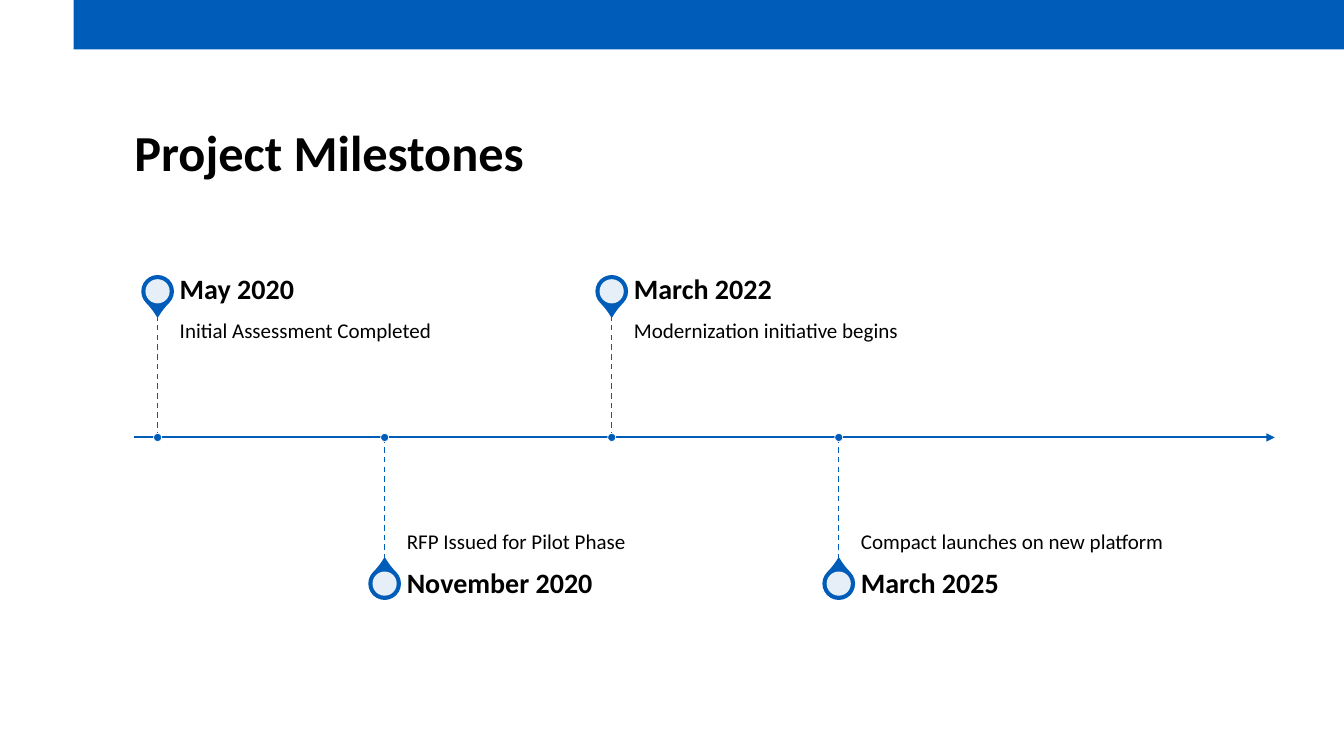
from lxml.etree import SubElement
from pptx import Presentation
from pptx.dml.color import RGBColor
from pptx.enum.dml import MSO_LINE
from pptx.enum.shapes import MSO_CONNECTOR, MSO_SHAPE
from pptx.enum.text import MSO_ANCHOR
from pptx.oxml.ns import qn
from pptx.util import Inches, Pt

COLORS = {"blue": "005CB9", "white": "FFFFFF", "text": "000000"}
FONT = "Calibri"
SLIDE_W, SLIDE_H = 13.33, 7.5

MILESTONES = [
    ("May 2020", "Initial Assessment Completed"),
    ("November 2020", "RFP Issued for Pilot Phase"),
    ("March 2022", "Modernization initiative begins"),
    ("March 2025", "Compact launches on new platform"),
]


def rgb(name):
    return RGBColor.from_string(COLORS[name])


def add_text(slide, text, x, y, w, h, size, bold=False,
             anchor=MSO_ANCHOR.TOP, insets=(0, 0, 0, 0)):
    """Insets run left, top, right, bottom."""
    tf = slide.shapes.add_textbox(*map(Inches, (x, y, w, h))).text_frame
    tf.word_wrap = True
    tf.vertical_anchor = anchor
    (tf.margin_left, tf.margin_top,
     tf.margin_right, tf.margin_bottom) = map(Inches, insets)
    p = tf.paragraphs[0]
    p.line_spacing = 0.9
    r = p.add_run()
    r.text = text
    r.font.name, r.font.size, r.font.bold = FONT, Pt(size), bold
    r.font.color.rgb = rgb("text")


def add_centered(slide, kind, cx, cy, w, h, fill, line=None, line_width=1):
    sp = slide.shapes.add_shape(
        kind, *map(Inches, (cx - w / 2, cy - h / 2, w, h)))
    sp.shadow.inherit = False
    sp.fill.solid()
    sp.fill.fore_color.rgb = rgb(fill)
    if line:
        sp.line.color.rgb = rgb(line)
        sp.line.width = Pt(line_width)
    else:
        sp.line.fill.background()
    return sp


def add_line(slide, x1, y1, x2, y2, width, dashed=False, arrow=False):
    line = slide.shapes.add_connector(
        MSO_CONNECTOR.STRAIGHT, *map(Inches, (x1, y1, x2, y2)))
    line.line.color.rgb = rgb("blue")
    line.line.width = Pt(width)
    if dashed:
        line.line.dash_style = MSO_LINE.DASH
    if arrow:
        SubElement(line.line._get_or_add_ln(), qn("a:tailEnd"), type="triangle")
    SubElement(line._element.spPr, qn("a:effectLst"))


def add_pin(slide, cx, cy, rotation):
    drop = add_centered(slide, MSO_SHAPE.TEAR, cx, cy, 0.31, 0.31, "blue", "blue")
    drop.adjustments[0] = 1.15
    drop.rotation = rotation
    hole = add_centered(slide, MSO_SHAPE.OVAL, cx, cy, 0.24, 0.24, "white")
    color = hole._element.spPr.find(qn("a:solidFill"))[0]
    SubElement(color, qn("a:alpha"), val="90000")


def add_milestone(slide, x, axis_y, width, date, detail, above):
    """One pin, stem and label pair on the given side of the axis."""
    stem, date_h, text_x = 1.24, 0.43, x + 0.22
    side = -1 if above else 1
    add_pin(slide, x, axis_y + side * 1.45, 135 if above else 315)
    add_text(slide, detail, text_x, axis_y - stem if above else axis_y,
             width, stem, 15,
             anchor=MSO_ANCHOR.TOP if above else MSO_ANCHOR.BOTTOM,
             insets=(0, 0.1, 0.1, 0.16) if above else (0, 0.16, 0, 0.1))
    date_y = axis_y + side * (stem + date_h / 2) - date_h / 2
    add_text(slide, date, text_x, date_y, width, date_h, 20, bold=True,
             anchor=MSO_ANCHOR.MIDDLE, insets=(0, 0, 0.14, 0))
    add_line(slide, x, axis_y, x, axis_y + side * stem, 1, dashed=True)
    add_centered(slide, MSO_SHAPE.OVAL, x, axis_y, 0.08, 0.08,
                 "blue", "white", 0.5)


def add_header(slide, x, y, w, h):
    band_x, band_h = 0.73, 0.49
    band_w = SLIDE_W - band_x
    add_centered(slide, MSO_SHAPE.RECTANGLE, band_x + band_w / 2, band_h / 2,
                 band_w, band_h, "blue")
    add_text(slide, "Project Milestones", x, y, w, h, 36, bold=True,
             anchor=MSO_ANCHOR.BOTTOM)


def add_timeline(slide, x, y, w, h):
    axis_y = y + h / 2
    step = w / 5
    add_line(slide, x, axis_y, x + w, axis_y, 1.5, arrow=True)
    for i, (date, detail) in enumerate(MILESTONES):
        add_milestone(slide, x + 0.23 + i * (step - 0.01), axis_y, w / 3,
                      date, detail, above=i % 2 == 0)


def main():
    prs = Presentation()
    prs.slide_width, prs.slide_height = Inches(SLIDE_W), Inches(SLIDE_H)
    slide = prs.slides.add_slide(prs.slide_layouts[6])
    left = SLIDE_W * 0.1
    add_header(slide, left, 1.22, 11.3, 0.59)
    add_timeline(slide, left, 2.67, 11.31, 3.34)
    prs.save("out.pptx")


if __name__ == "__main__":
    main()
